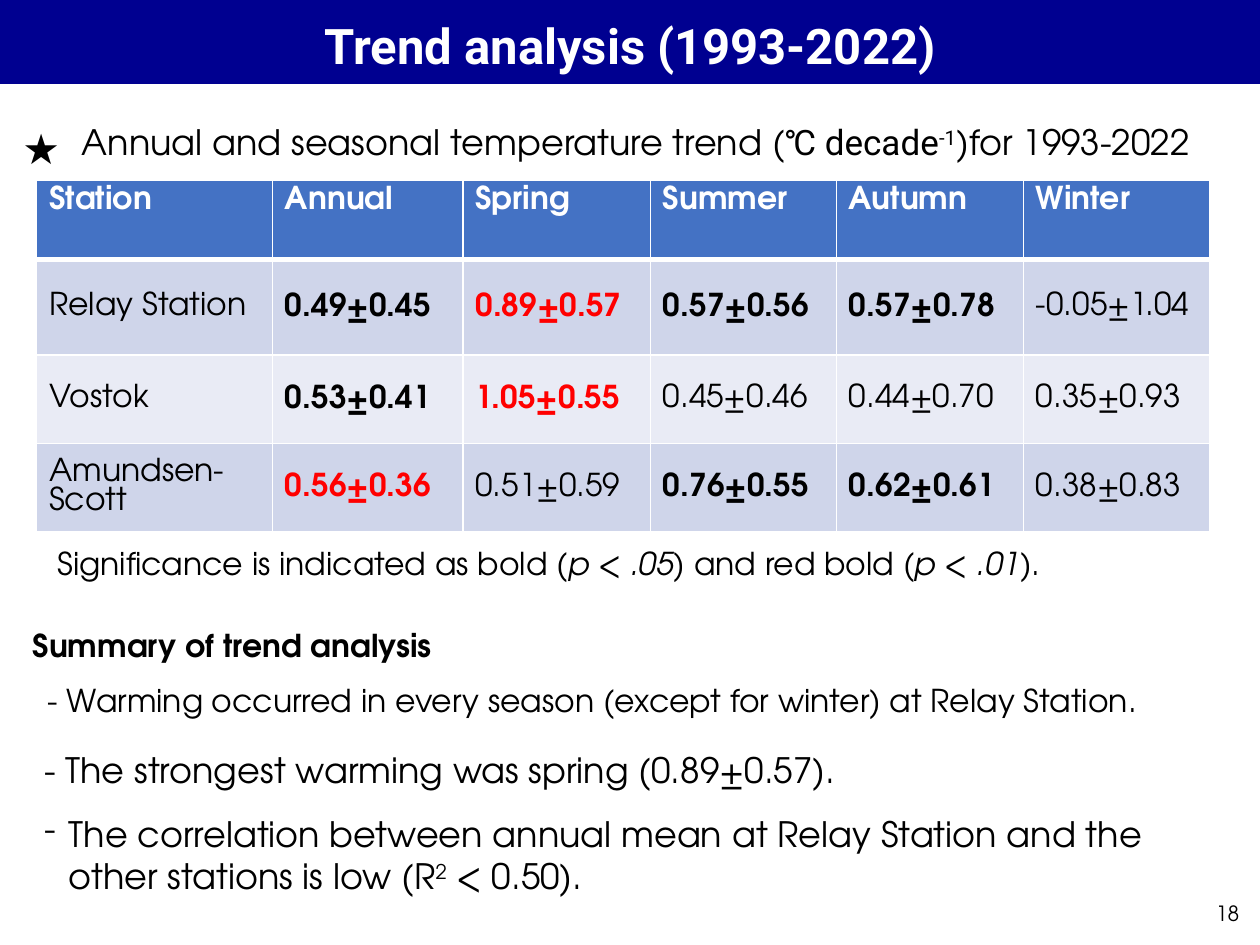
from dataclasses import dataclass
from typing import Any

from lxml.etree import SubElement
from pptx import Presentation
from pptx.dml.color import RGBColor
from pptx.enum.shapes import MSO_SHAPE
from pptx.enum.text import MSO_ANCHOR, MSO_AUTO_SIZE, PP_ALIGN
from pptx.oxml import parse_xml
from pptx.oxml.ns import nsdecls, qn
from pptx.util import Cm, Pt

BODY = "TeX Gyre Adventor"
DISPLAY = "Roboto"
NAVY = "000090"
WHITE = "FFFFFF"
BLACK = "000000"
RED = "FF0000"
HEADER_BLUE = "4472C4"
BANDS = ("CFD5EA", "E9EBF5")


@dataclass(frozen=True)
class Span:
    text: str
    font: str = BODY
    italic: bool = False
    raised: bool = False


@dataclass(frozen=True)
class Line:
    left: float
    top: float
    width: float
    height: float
    spans: tuple[Span, ...]
    size: int
    bold: bool = False
    align: Any = PP_ALIGN.LEFT


@dataclass(frozen=True)
class Trend:
    value: str
    bold: bool = False
    color: str = BLACK


def hex_color(code: str) -> RGBColor:
    return RGBColor.from_string(code)


def write(paragraph, text: str, *, size: int, font: str = BODY, color: str = BLACK,
          bold: bool = False, italic: bool = False, raised: bool = False) -> None:
    run = paragraph.add_run()
    run.text = text
    run.font.name = font
    run.font.size = Pt(size)
    run.font.bold = bold
    run.font.italic = italic
    run.font.color.rgb = hex_color(color)
    if raised:
        run.font._element.set("baseline", "30000")


def add_band(slide, top: float, height: float):
    band = slide.shapes.add_shape(MSO_SHAPE.RECTANGLE, 0, Cm(top), Cm(25.4), Cm(height))
    band.shadow.inherit = False
    band.fill.solid()
    band.fill.fore_color.rgb = hex_color(NAVY)
    band.line.color.rgb = hex_color(NAVY)
    band.line.width = Pt(0.75)
    return band


def add_title(slide, text: str) -> None:
    frame = add_band(slide, 0.41, 1.27).text_frame
    frame.word_wrap = True
    frame.auto_size = MSO_AUTO_SIZE.SHAPE_TO_FIT_TEXT
    frame.vertical_anchor = MSO_ANCHOR.TOP
    title = frame.paragraphs[0]
    title.alignment = PP_ALIGN.CENTER
    title.line_spacing = 0.8
    title.space_after = Pt(6)
    write(title, text, size=28, font=DISPLAY, color=WHITE, bold=True)


def add_line(slide, line: Line) -> None:
    frame = slide.shapes.add_textbox(
        Cm(line.left), Cm(line.top), Cm(line.width), Cm(line.height)).text_frame
    frame.word_wrap = True
    paragraph = frame.paragraphs[0]
    paragraph.alignment = line.align
    for span in line.spans:
        write(paragraph, span.text, size=line.size, font=span.font,
              bold=line.bold, italic=span.italic, raised=span.raised)


def add_borders(cell, top: float, bottom: float) -> None:
    properties = cell._tc.get_or_add_tcPr()
    widths = {"lnL": 1, "lnR": 1, "lnT": top, "lnB": bottom}
    for position, (edge, width) in enumerate(widths.items()):
        border = parse_xml(f'<a:{edge} {nsdecls("a")} w="{Pt(width)}"/>')
        fill = SubElement(border, qn("a:solidFill"))
        SubElement(fill, qn("a:srgbClr")).set("val", WHITE)
        properties.insert(position, border)


def fill_cell(cell, trend: Trend, fill: str, anchor, top: float, bottom: float) -> None:
    cell.fill.solid()
    cell.fill.fore_color.rgb = hex_color(fill)
    cell.vertical_anchor = anchor
    write(cell.text_frame.paragraphs[0], trend.value, size=18,
          color=trend.color, bold=trend.bold)
    add_borders(cell, top, bottom)


def strong(value: str) -> Trend:
    return Trend(value, bold=True)


def strongest(value: str) -> Trend:
    return Trend(value, bold=True, color=RED)


HEADINGS = ("Station", "Annual", "Spring", "Summer", "Autumn", "Winter")
STATIONS = (
    (Trend("Relay Station"), strong("0.49±0.45"), strongest("0.89±0.57"),
     strong("0.57±0.56"), strong("0.57±0.78"), Trend("-0.05±1.04")),
    (Trend("Vostok"), strong("0.53±0.41"), strongest("1.05±0.55"),
     Trend("0.45±0.46"), Trend("0.44±0.70"), Trend("0.35±0.93")),
    (Trend("Amundsen-Scott"), strongest("0.56±0.36"), Trend("0.51±0.59"),
     strong("0.76±0.55"), strong("0.62±0.61"), Trend("0.38±0.83")),
)
COLUMN_WIDTHS = (4.75, 3.84, 3.78, 3.75, 3.77, 3.75)
ROW_HEIGHTS = (1.6, 1.93, 1.78, 1.78)

LINES = (
    Line(19.51, 18.03, 5.72, 1.02, (Span("18"),), 12, align=PP_ALIGN.RIGHT),
    Line(0.2, 2.34, 1.45, 1.27, (Span("★", DISPLAY),), 24),
    Line(1.4, 2.31, 23.77, 1.12, (
        Span("Annual and seasonal temperature trend ("),
        Span("℃ decade", DISPLAY),
        Span("-1", DISPLAY, raised=True),
        Span(")for 1993-2022")), 20),
    Line(0.91, 10.85, 22.86, 1.02, (
        Span("Significance is indicated as bold ("),
        Span("p < .05", italic=True),
        Span(") and red bold ("),
        Span("p < .01", italic=True),
        Span(").")), 18),
    Line(0.41, 12.5, 10.03, 1.02, (Span("Summary of trend analysis"),), 18, bold=True),
    Line(0.71, 13.61, 24.69, 1.02, (
        Span("- Warming occurred in every season (except for winter) at Relay Station."),), 18),
    Line(0.64, 14.96, 24.69, 1.12, (
        Span("- The strongest warming was spring (0.89±0.57)."),), 20),
    Line(0.64, 16.13, 0.97, 1.12, (Span("-"),), 20),
    Line(1.14, 16.26, 23.57, 1.96, (
        Span("The correlation between annual mean at Relay Station "
             "and the other stations is low (R"),
        Span("2", raised=True),
        Span(" < 0.50).")), 20),
)


def add_trend_table(slide) -> None:
    table = slide.shapes.add_table(
        len(ROW_HEIGHTS), len(COLUMN_WIDTHS), Cm(0.74), Cm(3.63),
        Cm(sum(COLUMN_WIDTHS)), Cm(sum(ROW_HEIGHTS))).table
    for column, width in zip(table.columns, COLUMN_WIDTHS):
        column.width = Cm(width)
    for row, height in zip(table.rows, ROW_HEIGHTS):
        row.height = Cm(height)
    for column, heading in enumerate(HEADINGS):
        fill_cell(table.cell(0, column), Trend(heading, True, WHITE),
                  HEADER_BLUE, MSO_ANCHOR.TOP, 1, 3)
    for row, station in enumerate(STATIONS, start=1):
        for column, trend in enumerate(station):
            fill_cell(table.cell(row, column), trend, BANDS[(row - 1) % 2],
                      MSO_ANCHOR.MIDDLE, 3 if row == 1 else 1, 1)


def main() -> None:
    deck = Presentation()
    deck.slide_width, deck.slide_height = Cm(25.4), Cm(19.05)
    slide = deck.slides.add_slide(deck.slide_layouts[6])
    add_band(slide, 0, 0.94)
    add_title(slide, "Trend analysis (1993-2022)")
    add_trend_table(slide)
    for line in LINES:
        add_line(slide, line)
    deck.save("out.pptx")


if __name__ == "__main__":
    main()
